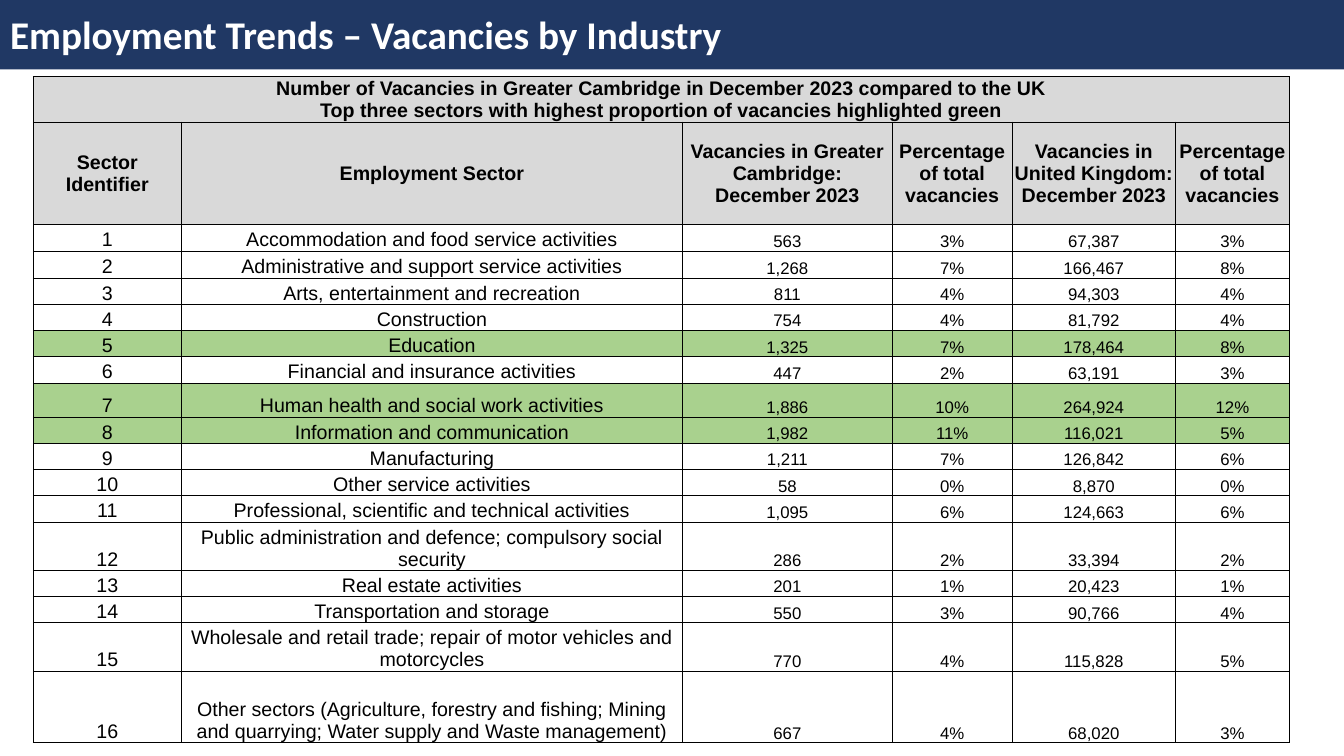
from dataclasses import dataclass

from lxml.etree import SubElement
from pptx import Presentation
from pptx.dml.color import RGBColor
from pptx.enum.text import MSO_ANCHOR, PP_ALIGN
from pptx.oxml.ns import qn
from pptx.util import Inches, Pt


@dataclass(frozen=True)
class Theme:
    """Colours, fonts and type sizes of the slide."""
    navy: str = "203864"
    white: str = "FFFFFF"
    black: str = "000000"
    header: str = "D9D9D9"
    highlight: str = "A9D18E"
    title_font: str = "Calibri"
    table_font: str = "Arial"
    title_size: int = 28
    label_size: int = 14
    figure_size: int = 12
    border: float = 0.5


THEME = Theme()
CAPTION = [
    "Number of Vacancies in Greater Cambridge in December 2023 compared to the UK",
    "Top three sectors with highest proportion of vacancies highlighted green",
]
HEADINGS = [
    "Sector Identifier",
    "Employment Sector",
    "Vacancies in Greater Cambridge: December 2023",
    "Percentage of total vacancies",
    "Vacancies in United Kingdom: December 2023",
    "Percentage of total vacancies",
]
SECTORS = [
    ("Accommodation and food service activities", "563", "3%", "67,387", "3%"),
    ("Administrative and support service activities", "1,268", "7%", "166,467", "8%"),
    ("Arts, entertainment and recreation", "811", "4%", "94,303", "4%"),
    ("Construction", "754", "4%", "81,792", "4%"),
    ("Education", "1,325", "7%", "178,464", "8%"),
    ("Financial and insurance activities", "447", "2%", "63,191", "3%"),
    ("Human health and social work activities", "1,886", "10%", "264,924", "12%"),
    ("Information and communication", "1,982", "11%", "116,021", "5%"),
    ("Manufacturing", "1,211", "7%", "126,842", "6%"),
    ("Other service activities", "58", "0%", "8,870", "0%"),
    ("Professional, scientific and technical activities", "1,095", "6%", "124,663", "6%"),
    ("Public administration and defence; compulsory social security",
     "286", "2%", "33,394", "2%"),
    ("Real estate activities", "201", "1%", "20,423", "1%"),
    ("Transportation and storage", "550", "3%", "90,766", "4%"),
    ("Wholesale and retail trade; repair of motor vehicles and motorcycles",
     "770", "4%", "115,828", "5%"),
    ("Other sectors (Agriculture, forestry and fishing; Mining and quarrying; "
     "Water supply and Waste management)", "667", "4%", "68,020", "3%"),
]
HIGHLIGHTED = {5, 7, 8}
COLUMN_WIDTHS = [1.47, 4.97, 2.08, 1.19, 1.62, 1.13]
CAPTION_HEIGHT, HEADING_HEIGHT, SECTOR_HEIGHT = 0.45, 1.02, 0.26
TALL_SECTORS = {2: 0.27, 7: 0.34, 12: 0.48, 15: 0.48, 16: 0.71}


def add_text(paragraph, text, font, size, color, bold):
    """Add one formatted run to a paragraph."""
    run = paragraph.add_run()
    run.text = text
    run.font.name = font
    run.font.size = Pt(size)
    run.font.bold = bold
    run.font.color.rgb = RGBColor.from_string(color)


def add_title(slide, box, text):
    """Turn the title placeholder into a banner filling the box."""
    banner = slide.shapes.title
    banner.left, banner.top, banner.width, banner.height = map(Inches, box)
    banner.fill.solid()
    banner.fill.fore_color.rgb = RGBColor.from_string(THEME.navy)
    frame = banner.text_frame
    frame.word_wrap = True
    frame.vertical_anchor = MSO_ANCHOR.MIDDLE
    heading = frame.paragraphs[0]
    heading.alignment = PP_ALIGN.LEFT
    add_text(heading, text, THEME.title_font, THEME.title_size, THEME.white, True)


def add_borders(cell):
    """Draw a thin line on each side of a cell."""
    properties = cell._tc.get_or_add_tcPr()
    for position, side in enumerate(("a:lnL", "a:lnR", "a:lnT", "a:lnB")):
        line = SubElement(properties, qn(side), w=str(Pt(THEME.border)))
        fill = SubElement(line, qn("a:solidFill"))
        SubElement(fill, qn("a:srgbClr"), val=THEME.black)
        properties.insert(position, line)


def fill_cell(cell, lines, size, fill=None, header=False):
    """Write centred lines into a cell and give it fill, margins and borders."""
    cell.margin_left = cell.margin_right = cell.margin_top = Inches(0.01)
    cell.margin_bottom = 0
    cell.vertical_anchor = MSO_ANCHOR.MIDDLE if header else MSO_ANCHOR.BOTTOM
    if fill:
        cell.fill.solid()
        cell.fill.fore_color.rgb = RGBColor.from_string(fill)
    else:
        cell.fill.background()
    frame = cell.text_frame
    for index, text in enumerate(lines):
        paragraph = frame.add_paragraph() if index else frame.paragraphs[0]
        paragraph.alignment = PP_ALIGN.CENTER
        add_text(paragraph, text, THEME.table_font, size, THEME.black, header)
    add_borders(cell)


def add_vacancies(slide, left, top):
    """Place the vacancies table with its top left corner at the given point."""
    heights = [CAPTION_HEIGHT, HEADING_HEIGHT] + [
        TALL_SECTORS.get(number, SECTOR_HEIGHT) for number in range(1, len(SECTORS) + 1)
    ]
    vacancies = slide.shapes.add_table(
        len(heights), len(COLUMN_WIDTHS), Inches(left), Inches(top),
        Inches(sum(COLUMN_WIDTHS)), Inches(sum(heights)),
    ).table
    vacancies.first_row = vacancies.horz_banding = False
    for column, width in zip(vacancies.columns, COLUMN_WIDTHS):
        column.width = Inches(width)
    for row, height in zip(vacancies.rows, heights):
        row.height = Inches(height)

    last = len(COLUMN_WIDTHS) - 1
    vacancies.cell(0, 0).merge(vacancies.cell(0, last))
    for column in range(last + 1):
        lines = [] if column else CAPTION
        fill_cell(vacancies.cell(0, column), lines, THEME.label_size, THEME.header, True)
    for column, heading in enumerate(HEADINGS):
        fill_cell(vacancies.cell(1, column), [heading], THEME.label_size, THEME.header, True)
    for number, sector in enumerate(SECTORS, start=1):
        fill = THEME.highlight if number in HIGHLIGHTED else None
        for column, value in enumerate((str(number), *sector)):
            size = THEME.label_size if column < 2 else THEME.figure_size
            fill_cell(vacancies.cell(number + 1, column), [value], size, fill)


def main():
    """Build and save the slide."""
    deck = Presentation()
    deck.slide_width, deck.slide_height = Inches(13.33), Inches(7.5)
    slide = deck.slides.add_slide(deck.slide_layouts[5])
    add_title(slide, (0, -0.02, 13.33, 0.71), "Employment Trends – Vacancies by Industry")
    add_vacancies(slide, 0.33, 0.76)
    deck.save("out.pptx")


if __name__ == "__main__":
    main()
